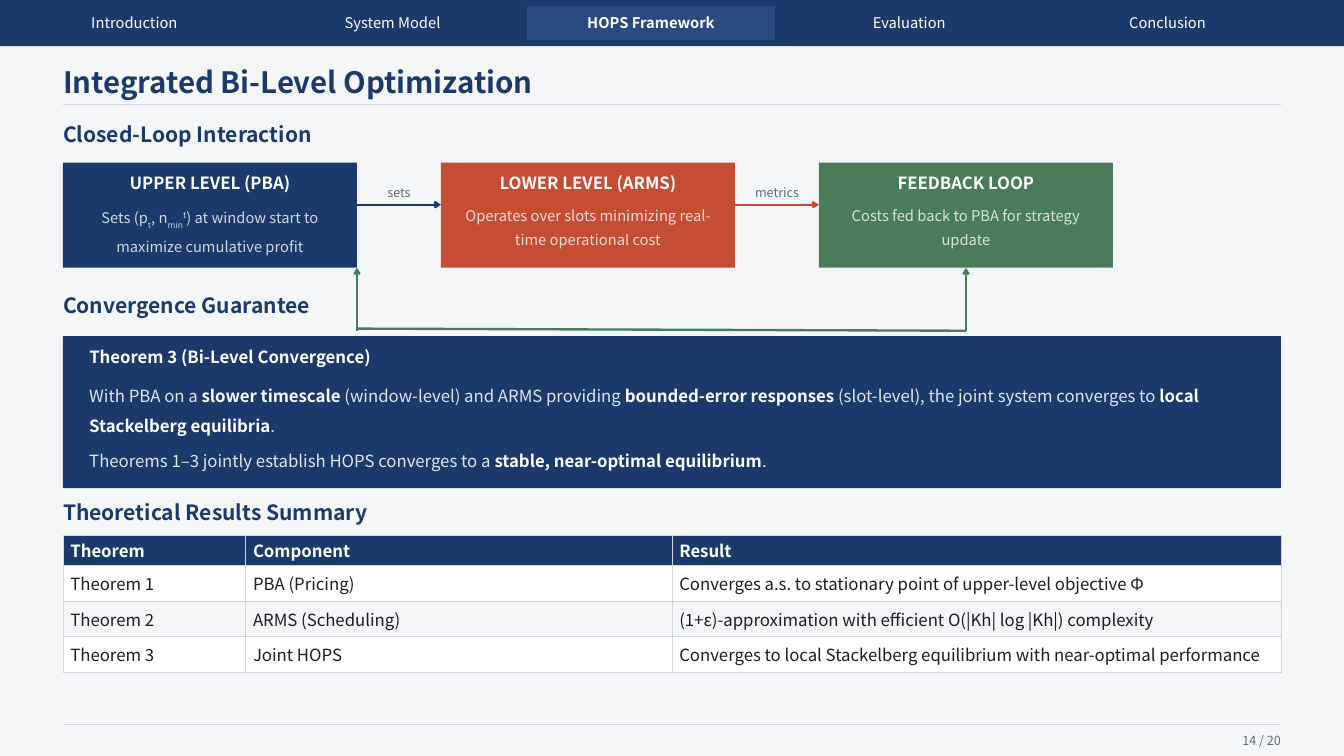
import pptx
import pptx.util
import pptx.dml.color
import pptx.enum.shapes
import pptx.enum.text
import pptx.oxml.ns
import lxml.etree

Pt = pptx.util.Pt
qn = pptx.oxml.ns.qn
ALIGN = pptx.enum.text.PP_ALIGN
MIDDLE = pptx.enum.text.MSO_ANCHOR.MIDDLE
TOP = pptx.enum.text.MSO_ANCHOR.TOP

FONT = "Noto Sans CJK SC"
NAVY, BLUE, RED, GREEN = "1B3A6B", "2A4A7F", "C44D34", "4A7C59"
PALE, RULE, GREY, INK, WHITE = "F5F6F8", "D0D5DD", "5A6B7F", "1A1D23", "FFFFFF"


def rgb(value):
    return pptx.dml.color.RGBColor.from_string(value)


def sub(parent, tag, **attrs):
    return lxml.etree.SubElement(parent, qn(tag), attrs)


def style(font, size, color, bold=False):
    font.name, font.size, font.bold = FONT, Pt(size), bold
    font.color.rgb = rgb(color)


def fade(element, percent):
    for clr in element.iter(qn("a:srgbClr")):
        sub(clr, "a:alpha", val=str(percent * 1000))


def setup_frame(tf, wrap=False, anchor=MIDDLE):
    tf.margin_left = tf.margin_right = tf.margin_top = tf.margin_bottom = 0
    tf.word_wrap, tf.vertical_anchor = wrap, anchor


def add_frame(s, x, y, w, h, wrap=False, anchor=MIDDLE):
    tf = s.shapes.add_textbox(Pt(x), Pt(y), Pt(w), Pt(h)).text_frame
    setup_frame(tf, wrap, anchor)
    return tf


def add_label(s, x, y, w, h, text, size, color, bold=False, align=ALIGN.LEFT):
    p = add_frame(s, x, y, w, h).paragraphs[0]
    p.text, p.alignment = text, align
    style(p.font, size, color, bold)


def add_heading(s, x, y, text):
    add_label(s, x, y, 400, 26, text, 20, NAVY, True)


def add_rect(s, x, y, w, h, color):
    sp = s.shapes.add_shape(pptx.enum.shapes.MSO_SHAPE.RECTANGLE, Pt(x), Pt(y), Pt(w), Pt(h))
    sp.shadow.inherit = False
    sp.fill.solid()
    sp.fill.fore_color.rgb = rgb(color)
    sp.line.fill.background()


def add_line(s, x1, y1, x2, y2, color, width=1, arrow=False):
    line = s.shapes.add_connector(pptx.enum.shapes.MSO_CONNECTOR.STRAIGHT,
                                  Pt(x1), Pt(y1), Pt(x2), Pt(y2))
    line.line.color.rgb, line.line.width = rgb(color), Pt(width)
    if arrow:
        sub(line.line._get_or_add_ln(), "a:tailEnd", type="arrow")
    sub(line._element.spPr, "a:effectLst")


def add_nav(s, x, y, w, h, names, active):
    add_rect(s, x, y, w, h, NAVY)
    tab, pitch = 236, 246
    add_rect(s, x + 10 + active * pitch, y + 6, tab, h - 12, BLUE)
    for i, name in enumerate(names):
        add_label(s, x + 10 + i * pitch, y, tab, h, name, 14, WHITE, i == active, ALIGN.CENTER)


def add_title(s, x, y, w, h, text):
    sp = s.shapes.title
    sp.left, sp.top, sp.width, sp.height = Pt(x), Pt(y), Pt(w), Pt(h)
    setup_frame(sp.text_frame)
    sp.text_frame.auto_size = pptx.enum.text.MSO_AUTO_SIZE.NONE
    p = sp.text_frame.paragraphs[0]
    p.text, p.alignment = text, ALIGN.LEFT
    style(p.font, 28, NAVY, True)


def add_card(s, x, y, w, h, color, name, runs):
    """runs: (text, baseline shift in percent)."""
    add_rect(s, x, y, w, h, color)
    add_label(s, x + 10, y + 7, w - 20, 24, name, 16, WHITE, True, ALIGN.CENTER)
    p = add_frame(s, x + 10, y + 35, w - 20, 55, True, TOP).paragraphs[0]
    p.alignment, p.line_spacing = ALIGN.CENTER, 1.4
    for text, shift in runs:
        r = p.add_run()
        r.text = text
        style(r.font, 14, WHITE)
        if shift:
            r._r.get_or_add_rPr().set("baseline", str(shift * 1000))
    fade(p._p, 80)


def add_flow(s, x, y, cards, links):
    w, h, gap = 280, 100, 80
    for i, card in enumerate(cards):
        left = x + i * (w + gap)
        add_card(s, left, y, w, h, *card)
        if i < len(links):
            end = left + w
            add_line(s, end, y + 40, end + gap, y + 40, card[0], 2, True)
            add_label(s, end + 5, y + 20, gap - 10, 16, links[i], 12, GREY, align=ALIGN.CENTER)
    # Feedback from the last card to the first
    start, end, bottom = x + w, x + 2 * (w + gap) + w / 2, y + h
    for stem in (start, end):
        add_line(s, stem, bottom + 60, stem, bottom, GREEN, 2, True)
    add_line(s, start, bottom + 58, end, bottom + 60, GREEN, 2.25)


def add_theorem(s, x, y, w, h, name, paragraphs):
    """paragraphs: lists of text pieces, every second one emphasised."""
    add_rect(s, x, y, w, h, NAVY)
    add_label(s, x + 25, y + 8, 600, 24, name, 16, WHITE, True)
    tf = add_frame(s, x + 25, y + 38, w - 50, 100, True, TOP)
    for i, pieces in enumerate(paragraphs):
        p = tf.add_paragraph() if i else tf.paragraphs[0]
        p.line_spacing = 1.5
        if i:
            p.space_before = Pt(4)
        for j, text in enumerate(pieces):
            r = p.add_run()
            r.text = text
            strong = j % 2 == 1
            style(r.font, 16, WHITE, strong)
            if not strong:
                fade(r._r, 87)


def add_borders(cell):
    tcPr = cell._tc.get_or_add_tcPr()
    for side in "LRTB":
        ln = sub(tcPr, "a:ln" + side, w=str(Pt(1)))
        sub(sub(ln, "a:solidFill"), "a:srgbClr", val=RULE)


def add_results(s, x, y, widths, heights, rows):
    table = s.shapes.add_table(len(rows), len(widths), Pt(x), Pt(y),
                               Pt(sum(widths)), Pt(sum(heights))).table
    for col, width in zip(table.columns, widths):
        col.width = Pt(width)
    for i, values in enumerate(rows):
        table.rows[i].height = Pt(heights[i])
        fill = NAVY if i == 0 else (PALE, WHITE)[i % 2]
        for j, text in enumerate(values):
            cell = table.cell(i, j)
            add_borders(cell)
            cell.fill.solid()
            cell.fill.fore_color.rgb = rgb(fill)
            cell.margin_left = cell.margin_right = Pt(7)
            cell.margin_top = cell.margin_bottom = 0
            cell.vertical_anchor = MIDDLE
            p = cell.text_frame.paragraphs[0]
            p.text = text
            style(p.font, 16, INK if i else WHITE, i == 0)


def main():
    prs = pptx.Presentation()
    prs.slide_width, prs.slide_height = Pt(1280), Pt(720)
    s = prs.slides.add_slide(prs.slide_layouts[5])
    s.background.fill.solid()
    s.background.fill.fore_color.rgb = rgb(PALE)
    left, width = 60, 1160
    right = left + width

    # Navigation and title
    add_nav(s, 0, 0, 1280, 44, ["Introduction", "System Model", "HOPS Framework",
                                "Evaluation", "Conclusion"], 2)
    add_title(s, left, 60, 900, 36, "Integrated Bi-Level Optimization")
    add_line(s, left, 100, right, 100, RULE)

    # Closed loop
    add_heading(s, left, 115, "Closed-Loop Interaction")
    add_flow(s, left, 155, [
        (NAVY, "UPPER LEVEL (PBA)", [
            ("Sets (p", 0), ("t", -40), (", n", 0), ("min", -40), ("t", 30),
            (") at window start to maximize cumulative profit", 0)]),
        (RED, "LOWER LEVEL (ARMS)",
         [("Operates over slots minimizing real-time operational cost", 0)]),
        (GREEN, "FEEDBACK LOOP", [("Costs fed back to PBA for strategy update", 0)]),
    ], ["sets", "metrics"])

    # Theorem
    add_heading(s, left, 278, "Convergence Guarantee")
    add_theorem(s, left, 320, width, 145, "Theorem 3 (Bi-Level Convergence)", [
        ["With PBA on a ", "slower timescale", " (window-level) and ARMS providing ",
         "bounded-error responses", " (slot-level), the joint system converges to ",
         "local Stackelberg equilibria", "."],
        ["Theorems 1–3 jointly establish HOPS converges to a ",
         "stable, near-optimal equilibrium", "."],
    ])

    # Results table
    add_heading(s, left, 475, "Theoretical Results Summary")
    add_results(s, left, 510, [174, 406, 580], [28.8, 33.8, 33.8, 33.8], [
        ["Theorem", "Component", "Result"],
        ["Theorem 1", "PBA (Pricing)",
         "Converges a.s. to stationary point of upper-level objective Φ"],
        ["Theorem 2", "ARMS (Scheduling)",
         "(1+ε)-approximation with efficient O(|Kh| log |Kh|) complexity"],
        ["Theorem 3", "Joint HOPS",
         "Converges to local Stackelberg equilibrium with near-optimal performance"],
    ])

    # Footer
    add_line(s, left, 690, right, 690, RULE)
    add_label(s, right - 60, 695, 60, 20, "14 / 20", 12, GREY, align=ALIGN.RIGHT)
    prs.save("out.pptx")


if __name__ == "__main__":
    main()
